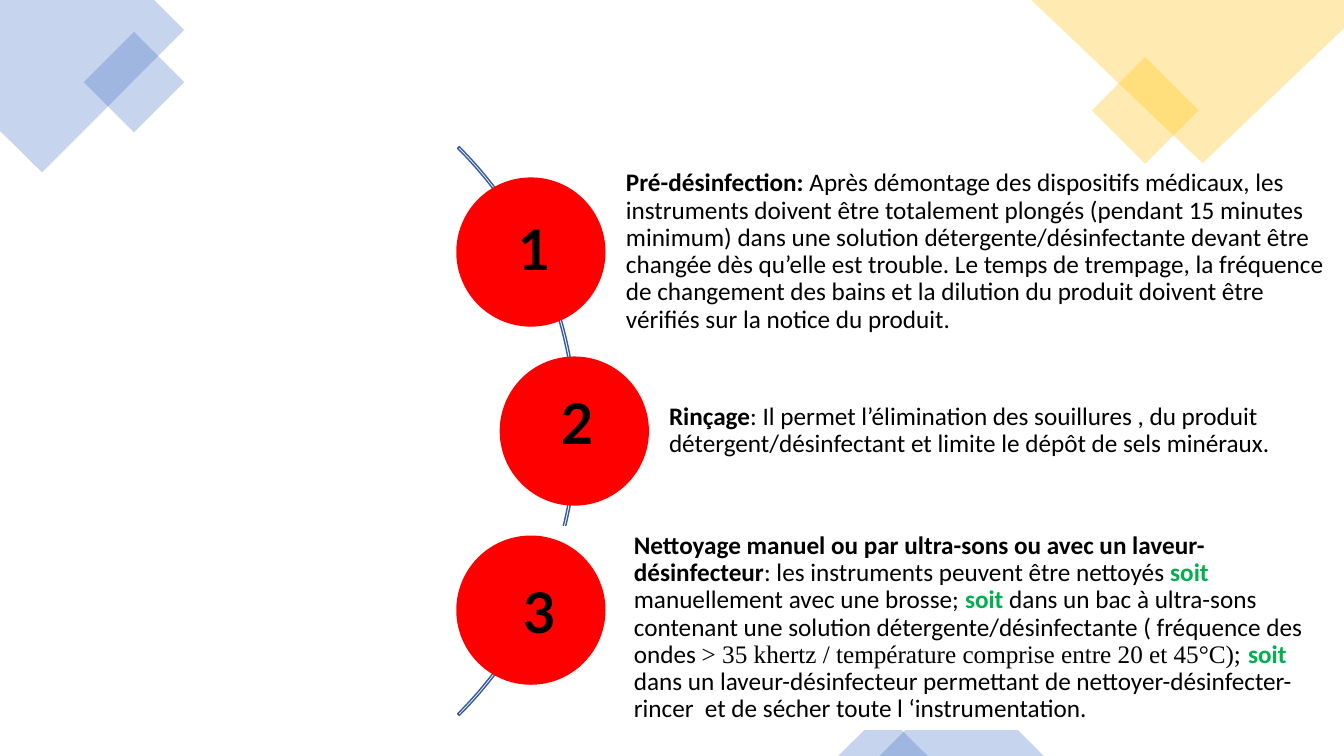
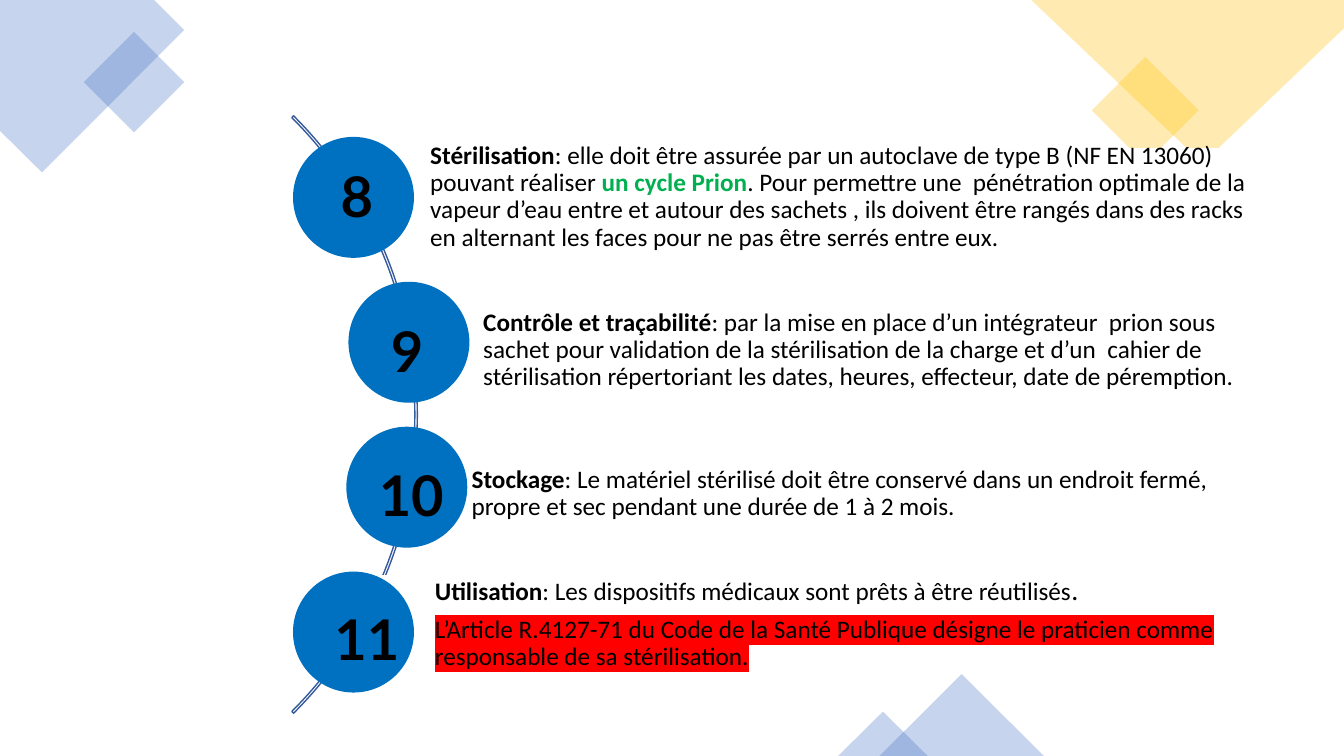
"""Build two slides describing the numbered steps of instrument sterilisation."""
from dataclasses import dataclass

from lxml.etree import SubElement
from pptx import Presentation
from pptx.dml.color import RGBColor
from pptx.enum.shapes import MSO_SHAPE
from pptx.enum.text import MSO_ANCHOR, PP_ALIGN
from pptx.oxml.ns import qn
from pptx.shapes.autoshape import Shape
from pptx.slide import Slide
from pptx.text.text import _Paragraph as Paragraph
from pptx.util import Pt

BLUE, YELLOW, ARC_BLUE = "4472C4", "FFC000", "365B9D"
RED, STEP_BLUE, GREEN = "FF0000", "0070C0", "00B050"
BLACK, WHITE = "000000", "FFFFFF"
BODY_FONT, NUMBER_FONT, SERIF_FONT = "Calibri", "Lato", "Times New Roman"
BODY_SIZE, NUMBER_SIZE = 18, 40
DECORATION_ALPHA = 30
NUMBER_HEIGHT = 55.4
TEXT_MARGIN = 3.6


@dataclass(frozen=True)
class Box:
    left: float
    top: float
    width: float
    height: float


@dataclass(frozen=True)
class Run:
    text: str
    bold: bool = False
    color: str = BLACK
    font: str = BODY_FONT
    size: float = BODY_SIZE
    highlight: str = ""


@dataclass(frozen=True)
class Step:
    number: str
    number_left: float
    number_top: float
    number_width: float
    circle_left: float
    panel: Box
    text_height: float
    paragraphs: tuple[tuple[Run, ...], ...]
    number_align: PP_ALIGN = PP_ALIGN.LEFT


@dataclass(frozen=True)
class StepSlide:
    color: str
    arc: Box
    first_circle_top: float
    circle_pitch: float
    circle_size: float
    text_inset: float
    steps: tuple[Step, ...]


@dataclass(frozen=True)
class Decoration:
    kind: MSO_SHAPE
    box: Box
    color: str


@dataclass(frozen=True)
class Corner:
    points: tuple[tuple[float, float], ...]
    color: str


CORNERS = (
    Corner(((0, 0), (110, 0), (131.5, 21.5), (30, 123.2), (0, 93.5)), BLUE),
    Corner(((736.6, 0), (960, 0), (960, 20.2), (859, 116.6)), YELLOW),
)
DECORATIONS = (
    Decoration(MSO_SHAPE.DIAMOND, Box(59.8, 22.7, 71.8, 71.8), BLUE),
    Decoration(MSO_SHAPE.DIAMOND, Box(779.8, 40.6, 76.4, 76.4), YELLOW),
    Decoration(MSO_SHAPE.ISOSCELES_TRIANGLE, Box(628.2, 481.5, 117.4, 58.5), BLUE),
    Decoration(MSO_SHAPE.ISOSCELES_TRIANGLE, Box(598.7, 508.3, 64, 31.7), BLUE),
)

CLEANING = StepSlide(
    RED, Box(-162.4, 20.6, 574.6, 574.6), 126.7, 127.9, 106.6, 67.7,
    (
        Step("1", 357.8, 149.8, 47.5, 325.9, Box(379.4, 137.1, 574.6, 85.7), 130, ((
            Run("Pré-désinfection:", True),
            Run(" Après démontage des dispositifs médicaux, les instruments doivent être "
                "totalement plongés (pendant 15 minutes minimum) dans une solution "
                "détergente/désinfectante devant être changée dès qu’elle est trouble. "
                "Le temps de trempage, la fréquence de changement des bains et la dilution "
                "du produit doivent être vérifiés sur la notice du produit."),
        ),), PP_ALIGN.CENTER),
        Step("2", 381.6, 274.3, 61.2, 356.9, Box(410.2, 265, 543.6, 85.7), 85.7, ((
            Run("Rinçage", True),
            Run(": Il permet l’élimination des souillures , du produit "
                "détergent/désinfectant et limite le dépôt de sels minéraux."),
        ),), PP_ALIGN.CENTER),
        Step("3", 366.5, 409, 61.2, 325.9, Box(385.1, 376.2, 574.6, 144.7), 150, ((
            Run("Nettoyage manuel ou par ultra-sons ou avec un laveur-désinfecteur", True),
            Run(": les instruments peuvent être nettoyés "),
            Run("soit ", True, GREEN),
            Run("manuellement avec une brosse; "),
            Run("soit", True, GREEN),
            Run(" dans un bac à ultra-sons contenant une solution détergente/désinfectante "
                "( fréquence des ondes "),
            Run("> 35 khertz / température comprise entre 20 et 45°C); ", font=SERIF_FONT),
            Run("soit ", True, GREEN),
            Run("dans un laveur-désinfecteur permettant de nettoyer-désinfecter- rincer  "
                "et de sécher toute l ‘instrumentation."),
        ),)),
    ),
)

STERILISATION = StepSlide(
    STEP_BLUE, Box(-305.3, -5.6, 603.4, 603.4), 97.8, 103.5, 86.4, 54.7,
    (
        Step("8", 236.2, 111.6, 45, 209.3, Box(252.6, 106.3, 641.5, 69.1), 90, ((
            Run("Stérilisation", True),
            Run(": elle doit être assurée par un autoclave de type B (NF EN 13060) "
                "pouvant réaliser "),
            Run("un cycle Prion", True, GREEN),
            Run(". Pour permettre une  pénétration optimale de la vapeur d’eau entre et "
                "autour des sachets , ils doivent être rangés dans des racks en alternant "
                "les faces pour ne pas être serrés entre eux."),
        ),)),
        Step("9", 272.2, 222.5, 45, 248.9, Box(290.5, 215.7, 601.9, 69.1), 70, ((
            Run("Contrôle et traçabilité", True),
            Run(": par la mise en place d’un intégrateur  prion sous sachet pour validation "
                "de la stérilisation de la charge et d’un  cahier de stérilisation "
                "répertoriant les dates, heures, effecteur, date de péremption."),
        ),)),
        Step("10", 263.5, 325.4, 72, 247.4, Box(282.2, 318.2, 601.9, 69.1), 69.1, ((
            Run("Stockage", True),
            Run(": Le matériel stérilisé doit être conservé dans un endroit fermé, propre "
                "et sec pendant une durée de 1 à 2 mois."),
        ),)),
        Step("11", 231.8, 428.4, 72, 209.3, Box(255.9, 411.1, 641.5, 69.1), 80, (
            (
                Run("Utilisation", True),
                Run(": Les dispositifs médicaux sont prêts à être réutilisés"),
                Run(".", size=20),
            ),
            (
                Run("L’Article R.4127-71 du Code de la Santé Publique désigne le praticien "
                    "comme responsable de sa stérilisation.", highlight=RED),
            ),
        )),
    ),
)


def rgb(color: str) -> RGBColor:
    """Turn a hex string into a colour."""
    return RGBColor.from_string(color)


def style_shape(shape: Shape, fill: str = "", line: str = "", alpha: int = 100) -> None:
    """Set fill, outline and opacity, and remove the shadow."""
    shape.shadow.inherit = False
    if fill:
        shape.fill.solid()
        shape.fill.fore_color.rgb = rgb(fill)
    else:
        shape.fill.background()
    if line:
        shape.line.color.rgb = rgb(line)
        shape.line.width = Pt(1)
    else:
        shape.line.fill.background()
    if alpha < 100:
        color = shape.fill._xPr.find(qn("a:solidFill"))[0]
        SubElement(color, qn("a:alpha"), val=str(alpha * 1000))


def add_preset(slide: Slide, kind: MSO_SHAPE, box: Box) -> Shape:
    """Add a preset shape in the given box."""
    return slide.shapes.add_shape(
        kind, Pt(box.left), Pt(box.top), Pt(box.width), Pt(box.height))


def add_text_box(slide: Slide, box: Box) -> Shape:
    """Add a wrapping text box in the given box."""
    shape = slide.shapes.add_textbox(
        Pt(box.left), Pt(box.top), Pt(box.width), Pt(box.height))
    shape.text_frame.word_wrap = True
    return shape


def add_run(paragraph: Paragraph, content: Run) -> None:
    """Append a formatted run to a paragraph."""
    run = paragraph.add_run()
    run.text = content.text
    font = run.font
    font.name = content.font
    font.size = Pt(content.size)
    font.bold = content.bold
    font.color.rgb = rgb(content.color)
    if content.highlight:
        properties = run._r.get_or_add_rPr()
        highlight = SubElement(properties, qn("a:highlight"))
        SubElement(highlight, qn("a:srgbClr"), val=content.highlight)
        properties.find(qn("a:solidFill")).addnext(highlight)


def add_decorations(slide: Slide) -> None:
    """Draw the translucent corner shapes shared by every slide."""
    for corner in CORNERS:
        points = [(Pt(x), Pt(y)) for x, y in corner.points]
        builder = slide.shapes.build_freeform(*points[0])
        builder.add_line_segments(points[1:], close=True)
        style_shape(builder.convert_to_shape(), corner.color, alpha=DECORATION_ALPHA)
    for decoration in DECORATIONS:
        shape = add_preset(slide, decoration.kind, decoration.box)
        style_shape(shape, decoration.color, alpha=DECORATION_ALPHA)


def add_arc(slide: Slide, box: Box) -> None:
    """Draw the thin arc that links the circles."""
    arc = add_preset(slide, MSO_SHAPE.BLOCK_ARC, box)
    for index, value in enumerate((189, 27, 0.003)):
        arc.adjustments[index] = value
    style_shape(arc, line=ARC_BLUE)


def add_step_text(slide: Slide, step: Step, inset: float) -> None:
    """Write the text of a step, centred vertically on its panel."""
    panel = step.panel
    top = panel.top + (panel.height - step.text_height) / 2
    box = Box(panel.left + inset, top, panel.width - inset, step.text_height)
    frame = add_text_box(slide, box).text_frame
    frame.vertical_anchor = MSO_ANCHOR.MIDDLE
    frame.margin_left = 0
    frame.margin_right = frame.margin_top = frame.margin_bottom = Pt(TEXT_MARGIN)
    for index, runs in enumerate(step.paragraphs):
        paragraph = frame.add_paragraph() if index else frame.paragraphs[0]
        paragraph.line_spacing = 0.9
        paragraph.space_after = Pt(7)
        for content in runs:
            add_run(paragraph, content)


def add_number(slide: Slide, step: Step) -> None:
    """Write the number of a step over its circle."""
    box = Box(step.number_left, step.number_top, step.number_width, NUMBER_HEIGHT)
    paragraph = add_text_box(slide, box).text_frame.paragraphs[0]
    paragraph.alignment = step.number_align
    add_run(paragraph, Run(step.number, True, font=NUMBER_FONT, size=NUMBER_SIZE))


def add_step_slide(presentation: Presentation, content: StepSlide) -> None:
    """Add one slide with its arc, panels, circles, texts and numbers."""
    slide = presentation.slides.add_slide(presentation.slide_layouts[6])
    add_decorations(slide)
    add_arc(slide, content.arc)
    size = content.circle_size
    for index, step in enumerate(content.steps):
        style_shape(add_preset(slide, MSO_SHAPE.RECTANGLE, step.panel), WHITE, WHITE)
        add_step_text(slide, step, content.text_inset)
        top = content.first_circle_top + index * content.circle_pitch
        circle = add_preset(slide, MSO_SHAPE.OVAL, Box(step.circle_left, top, size, size))
        style_shape(circle, content.color)
    for step in content.steps:
        add_number(slide, step)


def main() -> None:
    """Build and save the presentation."""
    presentation = Presentation()
    presentation.slide_width = Pt(960)
    presentation.slide_height = Pt(540)
    for content in (CLEANING, STERILISATION):
        add_step_slide(presentation, content)
    presentation.save("out.pptx")


if __name__ == "__main__":
    main()
